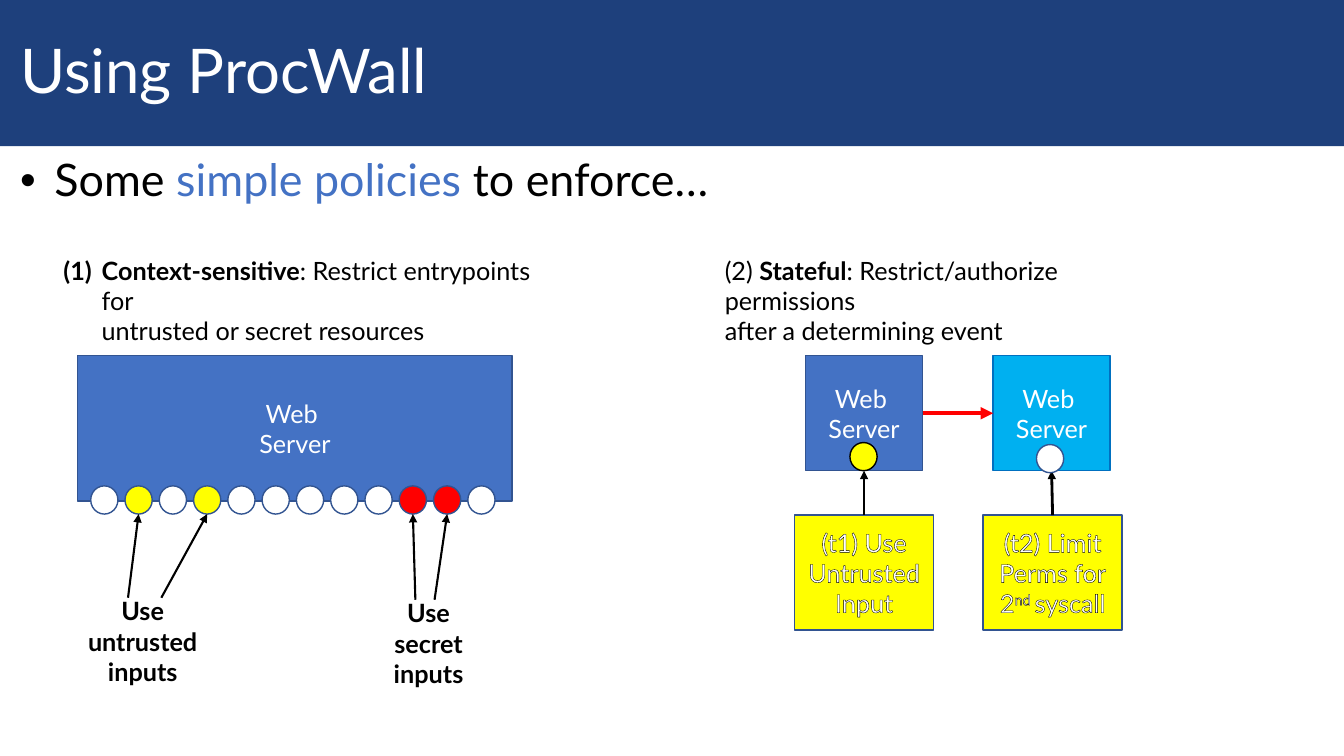
from lxml.etree import SubElement
from pptx import Presentation
from pptx.dml.color import RGBColor
from pptx.enum.shapes import MSO_CONNECTOR, MSO_SHAPE
from pptx.enum.text import MSO_ANCHOR, MSO_AUTO_SIZE, PP_ALIGN
from pptx.oxml import parse_xml
from pptx.oxml.ns import nsdecls, qn
from pptx.util import Inches, Pt

FONT = "Lato"
COLORS = {
    "navy": "1E407C", "blue": "4472C4", "edge": "325491", "cyan": "00B0F0",
    "cyan edge": "0070C0", "yellow": "FFFF00", "red": "FF0000",
    "white": "FFFFFF", "black": "000000",
}
DOT_WIDTH, DOT_HEIGHT = 0.27, 0.28
ENTRY_LEFT, ENTRY_TOP, ENTRY_PITCH = 0.9, 4.82, 0.34
ENTRY_COLORS = ["white", "yellow", "white", "yellow", "white", "white",
                "white", "white", "white", "red", "red", "white"]


def rgb(name):
    """Look up a palette colour."""
    return RGBColor.from_string(COLORS[name])


def style(paragraph, size=18, color="black", bold=None, align=None):
    """Set the shared font of a paragraph and its alignment."""
    font = paragraph.font
    font.name, font.size, font.bold = FONT, Pt(size), bold
    if color:
        font.color.rgb = rgb(color)
    if align is not None:
        paragraph.alignment = align


def set_indent(paragraph, left, marker=None, **attributes):
    """Give a paragraph a left margin and, with a marker, a hanging bullet."""
    properties = paragraph._p.get_or_add_pPr()
    properties.set("marL", str(Inches(left)))
    properties.set("indent", str(-Inches(left) if marker else 0))
    if marker:
        bullet = SubElement(properties, qn(marker))
        for key, value in attributes.items():
            bullet.set(key, value)


def fill_paragraphs(frame, lines, **look):
    """Write lines, each a list of (text, bold) parts, and return the paragraphs."""
    paragraphs = []
    for index, parts in enumerate(lines):
        paragraph = frame.paragraphs[0] if index == 0 else frame.add_paragraph()
        for text, bold in parts:
            run = paragraph.add_run()
            run.text = text
            if bold is not None:
                run.font.bold = bold
        paragraphs.append(paragraph)
    for paragraph in paragraphs if look else []:
        style(paragraph, **look)
    return paragraphs


def add_filled(slide, preset, box, fill, edge="edge"):
    """Add a flat filled shape with a thin edge."""
    shape = slide.shapes.add_shape(preset, *map(Inches, box))
    shape.shadow.inherit = False
    shape.fill.solid()
    shape.fill.fore_color.rgb = rgb(fill)
    shape.line.color.rgb = rgb(edge)
    shape.line.width = Pt(1)
    return shape


def add_block(slide, box, fill, lines, edge="edge"):
    """Add a rectangle with centred white text."""
    block = add_filled(slide, MSO_SHAPE.RECTANGLE, box, fill, edge)
    frame = block.text_frame
    frame.word_wrap = True
    frame.vertical_anchor = MSO_ANCHOR.MIDDLE
    fill_paragraphs(frame, [[(line, None)] for line in lines],
                    color="white", align=PP_ALIGN.CENTER)
    return block


def outline_text(block):
    """Draw a thin black outline around the letters of a block."""
    for paragraph in block.text_frame.paragraphs:
        for run in paragraph.runs:
            run._r.get_or_add_rPr().insert(0, parse_xml(
                f'<a:ln {nsdecls("a")} w="{Pt(0.75)}"><a:solidFill>'
                f'<a:srgbClr val="{COLORS["black"]}"/></a:solidFill></a:ln>'))


def add_dot(slide, left, top, fill, edge="edge"):
    """Add an entrypoint circle."""
    add_filled(slide, MSO_SHAPE.OVAL, (left, top, DOT_WIDTH, DOT_HEIGHT), fill, edge)


def add_label(slide, box):
    """Add a wrapping text box and return its frame."""
    frame = slide.shapes.add_textbox(*map(Inches, box)).text_frame
    frame.word_wrap = True
    return frame


def add_arrow(slide, start=(0, 0), end=(0, 0), color="black", width=1.5):
    """Add a straight arrow."""
    arrow = slide.shapes.add_connector(
        MSO_CONNECTOR.STRAIGHT, *map(Inches, (*start, *end)))
    arrow.line.color.rgb = rgb(color)
    arrow.line.width = Pt(width)
    SubElement(arrow.line._get_or_add_ln(), qn("a:tailEnd")).set("type", "triangle")
    SubElement(arrow._element.spPr, qn("a:effectLst"))
    return arrow


def join(slide, source, source_side, target, target_side, **look):
    """Connect two rectangles with an arrow."""
    arrow = add_arrow(slide, **look)
    arrow.begin_connect(source, source_side)
    arrow.end_connect(target, target_side)


def place(placeholder, box):
    """Move a placeholder."""
    placeholder.left, placeholder.top, placeholder.width, placeholder.height = map(Inches, box)
    placeholder.text_frame.auto_size = MSO_AUTO_SIZE.NONE


def add_heading(slide):
    """Fill the title band and the bullet line."""
    title, body = slide.shapes.title, slide.placeholders[1]
    place(title, (0, 0, 13.33, 1.45))
    title.fill.solid()
    title.fill.fore_color.rgb = rgb("navy")
    title.text_frame.margin_left = Inches(0.2)
    title.text_frame.vertical_anchor = MSO_ANCHOR.MIDDLE
    title.text_frame.text = "Using ProcWall"
    heading = title.text_frame.paragraphs[0]
    style(heading, 44, "white", align=PP_ALIGN.LEFT)
    heading.line_spacing = 0.9

    place(body, (0.1, 1.52, 13.07, 5.84))
    policies = body.text_frame.paragraphs[0]
    for text, color in (("Some ", "black"), ("simple policies ", "blue"),
                        ("to enforce…", "black")):
        run = policies.add_run()
        run.text = text
        run.font.color.rgb = rgb(color)
    policies.line_spacing = 0.9
    policies.space_before = Pt(0)
    set_indent(policies, 0.34, "a:buChar", char="•")
    style(policies, 32, None)


def add_context_policy(slide):
    """Draw the context-sensitive policy on the left."""
    add_block(slide, (0.77, 3.53, 4.31, 1.44), "blue", ("Web ", "Server"))
    caption = add_label(slide, (0.53, 2.48, 4.92, 0.71))
    rule, resources = fill_paragraphs(caption, [
        [("Context-sensitive", True), (": Restrict entrypoints for", False)],
        [("untrusted or secret resources", None)]])
    set_indent(rule, 0.38, "a:buAutoNum", type="arabicParenBoth")
    set_indent(resources, 0.38)
    style(rule)
    style(resources)

    for index, color in enumerate(ENTRY_COLORS):
        add_dot(slide, ENTRY_LEFT + index * ENTRY_PITCH, ENTRY_TOP, color)
    for box, text in (((0.57, 5.86, 1.69, 0.71), "Use untrusted"),
                      ((3.59, 5.88, 1.32, 0.71), "Use secret")):
        fill_paragraphs(add_label(slide, box), [[(text, None)], [("inputs", None)]],
                        bold=True, align=PP_ALIGN.CENTER)
    for index, start in ((1, (1.27, 5.93)), (3, (1.6, 5.93)),
                         (9, (4.12, 5.95)), (10, (4.31, 5.95))):
        entry_center = ENTRY_LEFT + index * ENTRY_PITCH + DOT_WIDTH / 2
        add_arrow(slide, start, (entry_center, ENTRY_TOP + DOT_HEIGHT))


def add_stateful_policy(slide):
    """Draw the stateful policy on the right."""
    caption = add_label(slide, (7.09, 2.48, 4.85, 0.71))
    fill_paragraphs(caption, [
        [("(2) ", None), ("Stateful", True), (": Restrict/authorize permissions", None)],
        [("after a determining event", None)]])
    for paragraph in caption.paragraphs:
        style(paragraph)

    before = add_block(slide, (7.99, 3.53, 1.16, 1.14), "blue", ("Web ", "Server"))
    after = add_block(slide, (9.85, 3.53, 1.16, 1.14), "cyan", ("Web ", "Server"), "cyan edge")
    use = add_block(slide, (7.88, 5.11, 1.38, 1.14), "yellow",
                    ("(t1) Use", "Untrusted", "Input"))
    limit = add_block(slide, (9.75, 5.11, 1.38, 1.14), "yellow",
                      ("(t2) Limit Perms for", "2"))
    syscall = limit.text_frame.paragraphs[1]
    ordinal = syscall.add_run()
    ordinal.text = "nd "
    ordinal._r.get_or_add_rPr().set("baseline", "30000")
    syscall.add_run().text = "syscall"
    outline_text(use)
    outline_text(limit)

    join(slide, before, 3, after, 1, color="red", width=3)
    join(slide, use, 0, before, 2, width=2)
    join(slide, limit, 0, after, 2, width=2)
    add_dot(slide, 8.43, 4.39, "yellow", "black")
    add_dot(slide, 10.28, 4.41, "white")


def main():
    """Build the slide and save it."""
    deck = Presentation()
    deck.slide_width, deck.slide_height = Inches(13.33), Inches(7.5)
    slide = deck.slides.add_slide(deck.slide_layouts[1])
    add_heading(slide)
    add_context_policy(slide)
    add_stateful_policy(slide)
    deck.save("out.pptx")


if __name__ == "__main__":
    main()
